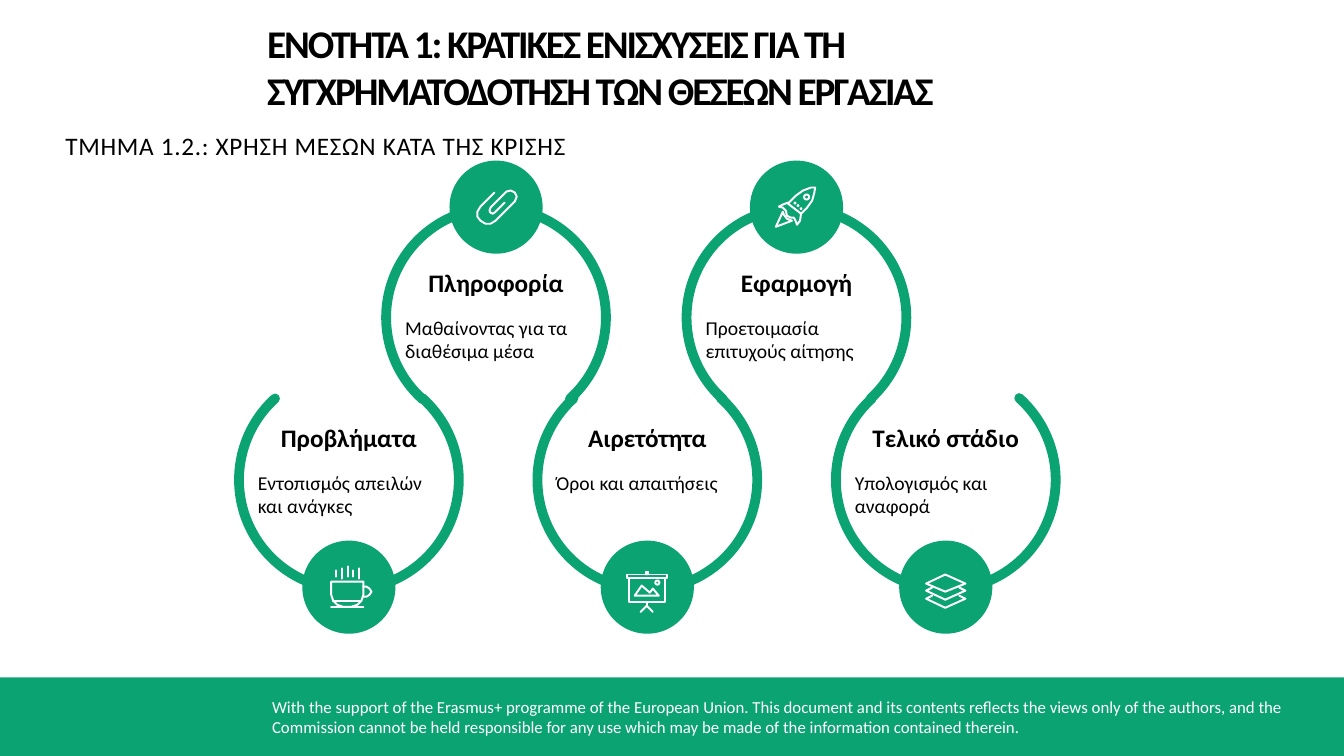
"""Build a slide with a five-stage winding chain of arcs."""
from dataclasses import dataclass
from math import cos, pi, sin

from pptx import Presentation
from pptx.dml.color import RGBColor
from pptx.enum.shapes import MSO_SHAPE
from pptx.enum.text import MSO_AUTO_SIZE, PP_ALIGN
from pptx.shapes.autoshape import Shape
from pptx.slide import Slide
from pptx.util import Inches, Pt

Point = tuple[float, float]
COLORS = {"green": "0CA373", "white": "FFFFFF", "black": "000000"}
FONTS = {
    "title": {"size": Pt(28), "bold": True},
    "part": {"size": Pt(18)},
    "head": {"size": Pt(18), "bold": True},
    "body": {"size": Pt(14)},
    "foot": {"size": Pt(12)},
}
RING, DISC = 2.18, 0.91


@dataclass
class Line:
    """A polyline in hundredths of an inch."""
    points: list[Point]
    close: bool = False


@dataclass
class Icon:
    """Strokes with the offset of their corner from the disc corner."""
    left: float
    top: float
    lines: list[Line]


@dataclass
class Stage:
    """One ring of the chain with its disc and text."""
    mid: float
    upper: bool
    head: str
    width: float
    body: str
    icon: Icon


def dot(x: float, y: float, radius: float) -> Line:
    """Return a small round outline."""
    turns = [2 * pi * step / 16 for step in range(16)]
    return Line([(x + radius * cos(turn), y + radius * sin(turn))
                 for turn in turns], True)


CUP = Icon(0.27, 0.24, [
    Line([(1, 16), (33, 16), (33, 29), (31, 35), (27, 39), (21, 41),
          (13, 41), (7, 39), (3, 35), (1, 29)], True),
    Line([(3, 35), (31, 35)]),
    Line([(1, 41), (33, 41)]),
    Line([(33, 21), (36, 21), (39, 23), (41, 26), (39, 29), (36, 31),
          (33, 31)]),
    *[Line([(x, top), (x, end)]) for x, top, end in (
        (6, 5, 11), (11.5, 3, 13), (17.5, 1, 11), (23, 5, 11),
        (28.5, 3, 13))],
])
CLIP = Icon(0.26, 0.28, [
    Line([(28, 13), (18, 23), (16, 24), (14, 23), (13, 21), (14, 18),
          (30, 2), (34, 1), (38, 3), (40, 7), (38, 12), (19, 31),
          (14, 34), (9, 34), (4, 31), (1, 27), (1, 22), (4, 17),
          (18, 3)]),
])
BOARD = Icon(0.24, 0.29, [
    Line([(1, 4), (41, 4), (41, 7), (1, 7)], True),
    Line([(3, 7), (39, 7), (39, 31), (3, 31)], True),
    Line([(21, 31), (21, 35)]),
    Line([(15, 41), (21, 35), (27, 41)]),
    Line([(20, 4), (20, 1), (22, 1), (22, 4)]),
    Line([(9, 25), (16, 15), (24, 22), (27, 18), (33, 25)], True),
    dot(31.5, 12, 2),
])
ROCKET = Icon(0.24, 0.25, [
    Line([(40, 1), (36, 1), (28, 4), (21, 9), (13, 17), (26, 27),
          (32, 21), (37, 14), (39, 7)], True),
    Line([(13, 16), (8, 18), (4, 20), (8, 21), (11, 24), (12, 29),
          (16, 31), (19, 31), (21, 35), (22, 38), (25, 34), (26, 27)]),
    Line([(8, 25), (1, 40), (17, 34), (12, 32), (9, 28)], True),
    dot(31.5, 10.5, 2.5), dot(20, 16.5, 0.4), dot(23, 19, 0.4),
    dot(26, 22, 0.4),
])
LAYERS = Icon(0.25, 0.32, [
    Line([(1, 10), (20, 1), (40, 10), (20, 18)], True),
    *[Line([(7, 14 + drop), (1, 17 + drop), (20, 26 + drop),
            (40, 17 + drop), (34, 14 + drop)]) for drop in (0, 8)],
])

STAGES = [
    Stage(9.38, False, "Τελικό στάδιο", 1.67, "Υπολογισμός και αναφορά",
          LAYERS),
    Stage(7.9, True, "Εφαρμογή", 1.31, "Προετοιμασία επιτυχούς αίτησης",
          ROCKET),
    Stage(6.42, False, "Αιρετότητα", 1.39, "Όροι και απαιτήσεις", BOARD),
    Stage(4.92, True, "Πληροφορία", 1.56,
          "Μαθαίνοντας για τα διαθέσιμα μέσα", CLIP),
    Stage(3.46, False, "Προβλήματα", 1.56,
          "Εντοπισμός απειλών και ανάγκες", CUP),
]


def tint(name: str) -> RGBColor:
    """Return a named colour."""
    return RGBColor.from_string(COLORS[name])


def paint(shape: Shape, fill: str = "", line: str = "",
          width: float = 1) -> None:
    """Set fill and line, or clear them, and drop the shadow."""
    shape.shadow.inherit = False
    for part, name in ((shape.fill, fill), (shape.line.fill, line)):
        if name:
            part.solid()
            part.fore_color.rgb = tint(name)
        else:
            part.background()
    if line:
        shape.line.width = Pt(width)
        shape.line._get_or_add_ln().set("cap", "rnd")


def write(slide: Slide, box: tuple[float, float, float, float], text: str,
          style: str, color: str = "black", wrap: bool = True,
          inset: bool = True, space: int = 0) -> None:
    """Add one styled paragraph in a text box."""
    frame = slide.shapes.add_textbox(*map(Inches, box)).text_frame
    frame.word_wrap = wrap
    frame.auto_size = MSO_AUTO_SIZE.SHAPE_TO_FIT_TEXT
    if not inset:
        for side in ("left", "top", "right", "bottom"):
            setattr(frame, f"margin_{side}", 0)
    para = frame.paragraphs[0]
    para.alignment = PP_ALIGN.LEFT if wrap else PP_ALIGN.CENTER
    run = para.add_run()
    run.text = text
    for key, value in {"name": "Calibri", **FONTS[style]}.items():
        setattr(run.font, key, value)
    run.font.color.rgb = tint(color)
    if space:
        run._r.get_or_add_rPr().set("spc", str(space))


def sketch(slide: Slide, icon: Icon, left: float, top: float) -> None:
    """Draw an icon as white strokes in one shape."""
    paths = [[(Inches(left + x / 100), Inches(top + y / 100))
              for x, y in line.points] for line in icon.lines]
    pen = slide.shapes.build_freeform(*paths[0][0])
    for line, points in zip(icon.lines, paths):
        pen.move_to(*points[0])
        pen.add_line_segments(points[1:], close=line.close)
    paint(pen.convert_to_shape(), line="white", width=1.4)


def draw(slide: Slide, stage: Stage) -> None:
    """Draw one stage of the chain."""
    top, rise, drop = (2.06, -0.46, 0.54) if stage.upper else (3.67, 1.7, 0.47)
    left = stage.mid - DISC / 2
    arc = slide.shapes.add_shape(
        MSO_SHAPE.ARC, Inches(stage.mid - RING / 2), Inches(top),
        Inches(RING), Inches(RING))
    arc.adjustments[0], arc.adjustments[1] = 79.14, 28.68
    arc.rotation = 0 if stage.upper else 180
    paint(arc, line="green", width=7)
    disc = slide.shapes.add_shape(
        MSO_SHAPE.OVAL, Inches(left), Inches(top + rise),
        Inches(DISC), Inches(DISC))
    paint(disc, "green", "green")
    sketch(slide, stage.icon, left + stage.icon.left,
           top + rise + stage.icon.top)
    write(slide, (stage.mid - 1, top + drop + 0.48, 2, 0.71), stage.body,
          "body")
    write(slide, (stage.mid - stage.width / 2, top + drop, stage.width, 0.4),
          stage.head, "head", wrap=False)


def main() -> None:
    """Build and save the slide."""
    deck = Presentation()
    deck.slide_width, deck.slide_height = Inches(13.33), Inches(7.5)
    slide = deck.slides.add_slide(deck.slide_layouts[6])
    band = slide.shapes.add_shape(MSO_SHAPE.RECTANGLE, 0, Inches(6.72),
                                  Inches(13.33), Inches(0.78))
    paint(band, "green")
    write(slide, (2.6, 6.86, 10.42, 0.5), "With the support of the Erasmus+ programme of the European Union. This document and its contents reflects the views only of the authors, and the Commission cannot be held responsible for any use which may be made of the information contained therein.", "foot", "white")
    for stage in STAGES:
        draw(slide, stage)
    write(slide, (0.55, 1.24, 6.66, 0.4),
          "ΤΜΗΜΑ 1.2.: ΧΡΗΣΗ ΜΕΣΩΝ ΚΑΤΑ ΤΗΣ ΚΡΙΣΗΣ", "part", space=50)
    write(slide, (2.65, 0.19, 8.9, 0.96), "ΕΝΟΤΗΤΑ 1: ΚΡΑΤΙΚΕΣ ΕΝΙΣΧΥΣΕΙΣ ΓΙΑ ΤΗ ΣΥΓΧΡΗΜΑΤΟΔΟΤΗΣΗ ΤΩΝ ΘΕΣΕΩΝ ΕΡΓΑΣΙΑΣ", "title", inset=False, space=-150)
    deck.save("out.pptx")


if __name__ == "__main__":
    main()
